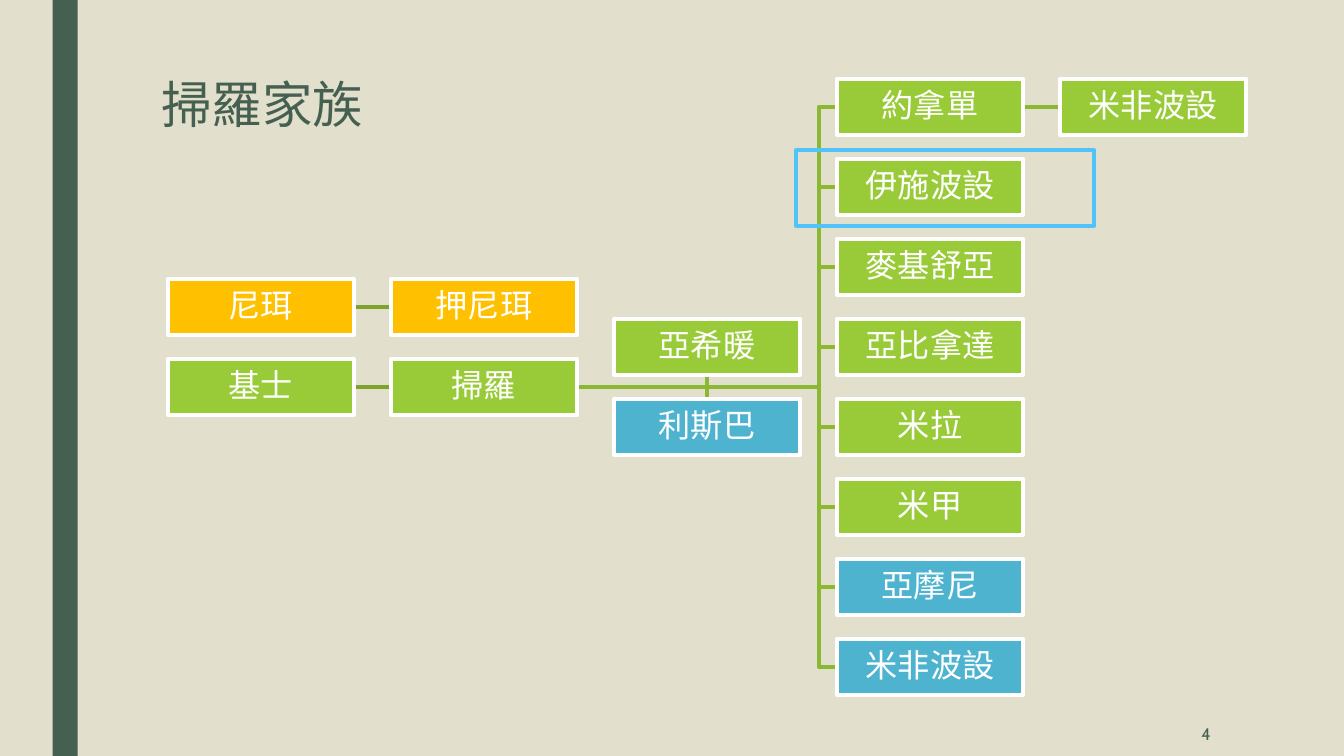
from dataclasses import dataclass

from pptx import Presentation
from pptx.dml.color import RGBColor as RGB
from pptx.enum.shapes import MSO_CONNECTOR as LINK, MSO_SHAPE as SHAPE
from pptx.enum.text import MSO_ANCHOR as ANCHOR, PP_ALIGN as ALIGN
from pptx.oxml import parse_xml
from pptx.oxml.ns import nsdecls
from pptx.util import Pt


@dataclass(frozen=True)
class Theme:
    back: str = "E2DFCC"
    dark: str = "455F51"
    white: str = "FFFFFF"
    green: str = "99CB38"
    gold: str = "FFC000"
    blue: str = "4EB3CF"
    frame: str = "51C3F9"
    root: str = "7BA32D"
    branch: str = "8BB833"
    head: str = "Arial"
    body: str = "Cabin"
    title: float = 36
    name: float = 23
    number: float = 12
    line: float = 2.75


T = Theme()
LEFT, TOP = 120, 56.2
COL, ROW = 159.3, 57.15
WIDE, HIGH = 133, 40.3
TRUNK = 584.8

SONS = [
    ("約拿單", T.green),
    ("伊施波設", T.green),
    ("麥基舒亞", T.green),
    ("亞比拿達", T.green),
    ("米拉", T.green),
    ("米甲", T.green),
    ("亞摩尼", T.blue),
    ("米非波設", T.blue),
]


def style(frame, font, size, color, align, space=1.0):
    para = frame.paragraphs[0]
    para.alignment = align
    para.line_spacing = space
    for run in para.runs:
        run.font.name = font
        run.font.size = Pt(size)
        run.font.color.rgb = RGB.from_string(color)


def stroke(shape, color):
    shape.line.color.rgb = RGB.from_string(color)
    shape.line.width = Pt(T.line)


def add_rect(slide, x, y, wide, high, fill=None, line=None):
    rect = slide.shapes.add_shape(SHAPE.RECTANGLE, Pt(x), Pt(y), Pt(wide), Pt(high))
    rect.shadow.inherit = False
    if fill:
        rect.fill.solid()
        rect.fill.fore_color.rgb = RGB.from_string(fill)
    else:
        rect.fill.background()
    if line:
        stroke(rect, line)
    else:
        rect.line.fill.background()
    return rect


def add_name(slide, text, col, row, fill):
    """Place one person on the grid of generations and rows."""
    box = add_rect(slide, LEFT + col * COL, TOP + row * ROW, WIDE, HIGH, fill, T.white)
    frame = box.text_frame
    frame.text = text
    frame.word_wrap = True
    frame.vertical_anchor = ANCHOR.MIDDLE
    frame.margin_left = frame.margin_right = Pt(1.5)
    frame.margin_top = frame.margin_bottom = Pt(1.5)
    style(frame, T.body, T.name, T.white, ALIGN.CENTER, 0.9)
    return box


def send_back(slide, shape):
    slide.shapes._spTree.insert(2, shape._element)


def add_link(slide, start, end, color):
    """Join the right side of one box to the left side of the next."""
    link = slide.shapes.add_connector(LINK.STRAIGHT, 0, 0, 0, 0)
    link.begin_connect(start, 3)
    link.end_connect(end, 1)
    stroke(link, color)
    link._element.spPr.append(parse_xml(f"<a:effectLst {nsdecls('a')}/>"))
    send_back(slide, link)


def add_path(slide, points):
    pen = slide.shapes.build_freeform(*points[0])
    pen.add_line_segments(points[1:], close=False)
    path = pen.convert_to_shape()
    path.shadow.inherit = False
    path.fill.background()
    stroke(path, T.branch)
    send_back(slide, path)


def add_title(slide, text):
    title = slide.shapes.title
    title.left, title.top, title.width, title.height = Pt(108), Pt(54), Pt(771), Pt(86.4)
    frame = title.text_frame
    frame.text = text
    frame.vertical_anchor = ANCHOR.TOP
    style(frame, T.head, T.title, T.dark, ALIGN.LEFT, 0.89)


def add_number(slide, text):
    box = slide.shapes.add_textbox(Pt(746), Pt(508.3), Pt(126), Pt(31.7))
    frame = box.text_frame
    frame.text = text
    frame.word_wrap = True
    frame.vertical_anchor = ANCHOR.MIDDLE
    style(frame, T.body, T.number, T.dark, ALIGN.RIGHT)


def add_tree(slide):
    ner = add_name(slide, "尼珥", 0, 2.5, T.gold)
    abner = add_name(slide, "押尼珥", 1, 2.5, T.gold)
    kish = add_name(slide, "基士", 0, 3.5, T.green)
    saul = add_name(slide, "掃羅", 1, 3.5, T.green)
    wife = add_name(slide, "亞希暖", 2, 3, T.green)
    second = add_name(slide, "利斯巴", 2, 4, T.blue)
    sons = [add_name(slide, name, 3, row, fill) for row, (name, fill) in enumerate(SONS)]
    heir = add_name(slide, "米非波設", 4, 0, T.green)

    add_link(slide, ner, abner, T.root)
    add_link(slide, kish, saul, T.root)
    add_link(slide, sons[0], heir, T.branch)

    x, y = saul.left + saul.width, saul.top + saul.height // 2
    for son in sons:
        level = son.top + son.height // 2
        add_path(slide, [(x, y), (Pt(TRUNK), y), (Pt(TRUNK), level), (son.left, level)])
    mid = wife.left + wife.width // 2
    for edge in (wife.top + wife.height, second.top):
        add_path(slide, [(x, y), (mid, y), (mid, edge)])


def main():
    deck = Presentation()
    deck.slide_width, deck.slide_height = Pt(960), Pt(540)
    slide = deck.slides.add_slide(deck.slide_layouts[5])
    slide.background.fill.solid()
    slide.background.fill.fore_color.rgb = RGB.from_string(T.back)
    add_rect(slide, 37.5, 0, 18, 540, T.dark)
    add_title(slide, "掃羅家族")
    add_tree(slide)
    add_number(slide, "4")
    add_rect(slide, 568.8, 107.3, 213, 54, line=T.frame)
    deck.save("out.pptx")


if __name__ == "__main__":
    main()
